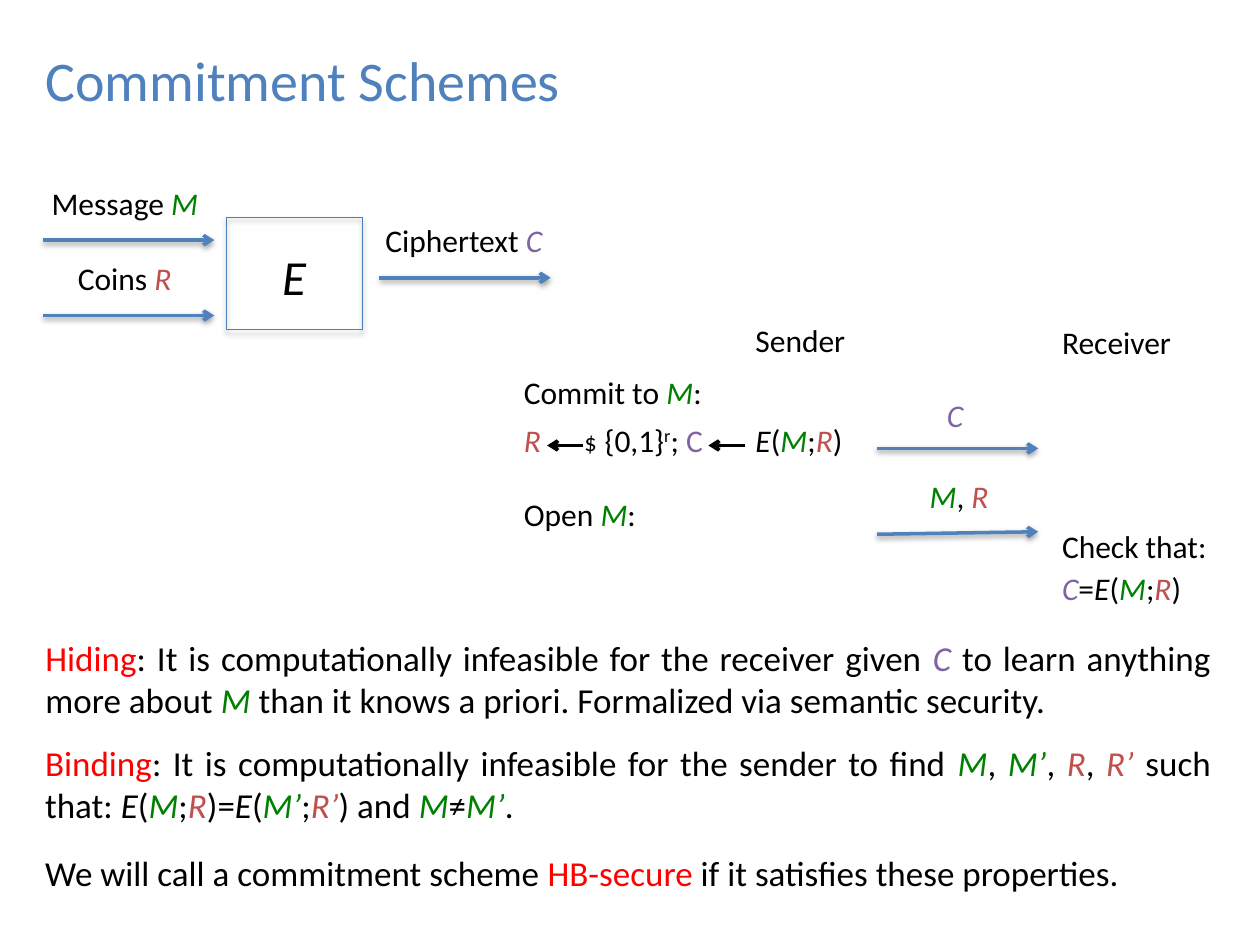
from lxml import etree
from pptx import Presentation
from pptx.dml import color
from pptx.enum import shapes, text
from pptx.oxml import ns
from pptx.util import Cm, Pt

BLUE, BLACK, GREEN, RED, PURPLE, ALERT = (
    "4F81BD", "000000", "008000", "C0504D", "8064A2", "FF0000")
SYMBOLS = {"M": GREEN, "M’": GREEN, "R": RED, "R’": RED, "C": PURPLE, "E": BLACK}
KEYWORDS = {"Hiding", "Binding", "HB-secure"}
LABEL_HEIGHT = 1.02


def rgb(hex_string):
    return color.RGBColor.from_string(hex_string)


def write(paragraph, wording, size=18, italic=True):
    """Add runs; the parts between bars are symbols, keywords or superscripts."""
    paragraph.font.name = "Calibri"
    for i, part in enumerate(wording.split("|")):
        if not part:
            continue
        marked = i % 2 == 1
        run = paragraph.add_run()
        run.text = part
        run.font.size = Pt(size)
        run.font.color.rgb = rgb(BLACK)
        if marked and part in SYMBOLS:
            run.font.italic = italic
            run.font.color.rgb = rgb(SYMBOLS[part])
        elif marked and part in KEYWORDS:
            run.font.color.rgb = rgb(ALERT)
        elif marked:
            run.font._element.set("baseline", "30000")


def label(slide, x, y, width, wording, size=18, height=LABEL_HEIGHT,
          wrap=True, italic=True):
    box = slide.shapes.add_textbox(Cm(x), Cm(y), Cm(width), Cm(height))
    box.text_frame.word_wrap = wrap
    write(box.text_frame.paragraphs[0], wording, size, italic)
    return box


def set_effects(shape, distance=0, alpha=0):
    """Give the shape a soft shadow below it, or none without a distance."""
    properties = shape._element.spPr
    for old in properties.findall(ns.qn("a:effectLst")):
        properties.remove(old)
    effects = etree.SubElement(properties, ns.qn("a:effectLst"))
    if distance:
        shadow = etree.SubElement(
            effects, ns.qn("a:outerShdw"), blurRad="40000", dist=str(distance),
            dir="5400000", rotWithShape="0")
        black = etree.SubElement(shadow, ns.qn("a:srgbClr"), val=BLACK)
        etree.SubElement(black, ns.qn("a:alpha"), val=str(alpha * 1000))


def arrow(slide, x1, y1, x2, y2, hue=BLUE):
    line = slide.shapes.add_connector(
        shapes.MSO_CONNECTOR.STRAIGHT, Cm(x1), Cm(y1), Cm(x2), Cm(y2))
    line.line.color.rgb = rgb(hue)
    line.line.width = Pt(2)
    etree.SubElement(line.line._get_or_add_ln(), ns.qn("a:tailEnd"), type="arrow")
    if hue == BLUE:
        set_effects(line, 20000, 38)
    else:
        set_effects(line)


def add_title(slide, x, y, width, height):
    title = slide.shapes.title
    title.left, title.top, title.width, title.height = map(Cm, (x, y, width, height))
    frame = title.text_frame
    frame.auto_size = text.MSO_AUTO_SIZE.NONE
    frame.vertical_anchor = text.MSO_ANCHOR.MIDDLE
    heading = frame.paragraphs[0]
    heading.alignment = text.PP_ALIGN.LEFT
    write(heading, "Commitment Schemes", 32)
    heading.runs[0].font.color.rgb = rgb(BLUE)


def add_encryption(slide, x, y):
    # Encryption box
    box = slide.shapes.add_shape(
        shapes.MSO_SHAPE.RECTANGLE, Cm(x + 3.78), Cm(y + 0.81), Cm(2.74), Cm(2.26))
    box.fill.background()
    box.line.color.rgb = rgb("4B7EBC")
    box.line.width = Pt(0.75)
    set_effects(box, 23000, 35)
    label(slide, x + 4.65, y + 1.27, 1.3, "|E|", 28, 1.45)

    # Inputs and output: label, its place, start of its arrow
    for wording, dx, dy, start in (("Message |M|", 0, 0, 0.08),
                                   ("Coins |R|", 0.53, 1.52, 0.08),
                                   ("Ciphertext |C|", 6.73, 0.76, 6.86)):
        label(slide, x + dx, y + dy, 3.84, wording)
        level = y + dy + 1.26
        arrow(slide, x + start, level, x + start + 3.45, level)


def add_protocol(slide, x, y):
    sender, receiver = x + 4.67, x + 10.85
    formula = y + 2.01

    # Parties and steps
    label(slide, sender, y, 3.23, "Sender")
    label(slide, receiver, y + 0.03, 3.78, "Receiver")
    label(slide, x, y + 1.04, 5.69, "Commit to |M|:")
    label(slide, x, y + 3.51, 3.84, "Open |M|:")
    label(slide, receiver, y + 4.14, 3.78, "Check that:")
    label(slide, receiver, y + 5, 3.07, "|C|=|E|(|M|;|R|)")

    # Commitment formula
    label(slide, x, formula, 0.81, "|R|")
    label(slide, x + 1.22, y + 2.13, 0.76, "$", 14, 0.86, wrap=False)
    label(slide, x + 1.63, formula, 2.69, "{0,1}|r|; |C|", italic=False)
    label(slide, sender, formula, 2.36, "|E|(|M|;|R|)")
    for start in (1.45, 4.7):
        arrow(slide, x + start, y + 2.63, x + start - 0.73, y + 2.63, BLACK)

    # Messages from sender to receiver
    label(slide, x + 8.53, y + 1.5, 1.37, "|C|")
    label(slide, x + 8.18, y + 3.15, 2.57, "|M|, |R|")
    for start, end in ((2.69, 2.69), (4.42, 4.37)):
        arrow(slide, x + 7.37, y + start, x + 10.62, y + end)


def justify(paragraph):
    paragraph.alignment = text.PP_ALIGN.JUSTIFY
    paragraph.space_before = Pt(4)


def add_properties(slide, x, y, width):
    # Hiding
    hiding = slide.placeholders[1]
    hiding.left, hiding.top, hiding.width, hiding.height = map(Cm, (x, y, width, 1.9))
    hiding.text_frame.auto_size = text.MSO_AUTO_SIZE.NONE
    statement = hiding.text_frame.paragraphs[0]
    justify(statement)
    settings = statement._p.get_or_add_pPr()
    settings.set("marL", "0")
    settings.set("indent", "0")
    etree.SubElement(settings, ns.qn("a:buNone"))
    write(statement, "|Hiding|: It is computationally infeasible for the receiver "
          "given |C| to learn anything more about |M| than it knows a priori. "
          "Formalized via semantic security.", 20)

    # Binding and conclusion
    binding = ("|Binding|: It is computationally infeasible for the sender to find "
               "|M|, |M’|, |R|, |R’| such that: "
               "|E|(|M|;|R|)=|E|(|M’|;|R’|) and |M|≠|M’|.")
    conclusion = ("We will call a commitment scheme |HB-secure| "
                  "if it satisfies these properties.")
    for wording, dy, height in ((binding, 2.13, 2.46), (conclusion, 4.34, 1.9)):
        box = label(slide, x, y + dy, width, wording, 20, height)
        justify(box.text_frame.paragraphs[0])


def main():
    deck = Presentation()
    deck.slide_width, deck.slide_height = Cm(25.4), Cm(19.05)
    slide = deck.slides.add_slide(deck.slide_layouts[1])
    add_title(slide, 0.66, 0, 17.86, 3.18)
    add_encryption(slide, 0.79, 3.58)
    add_protocol(slide, 10.31, 6.35)
    add_properties(slide, 0.66, 12.7, 24)
    deck.save("out.pptx")


if __name__ == "__main__":
    main()
